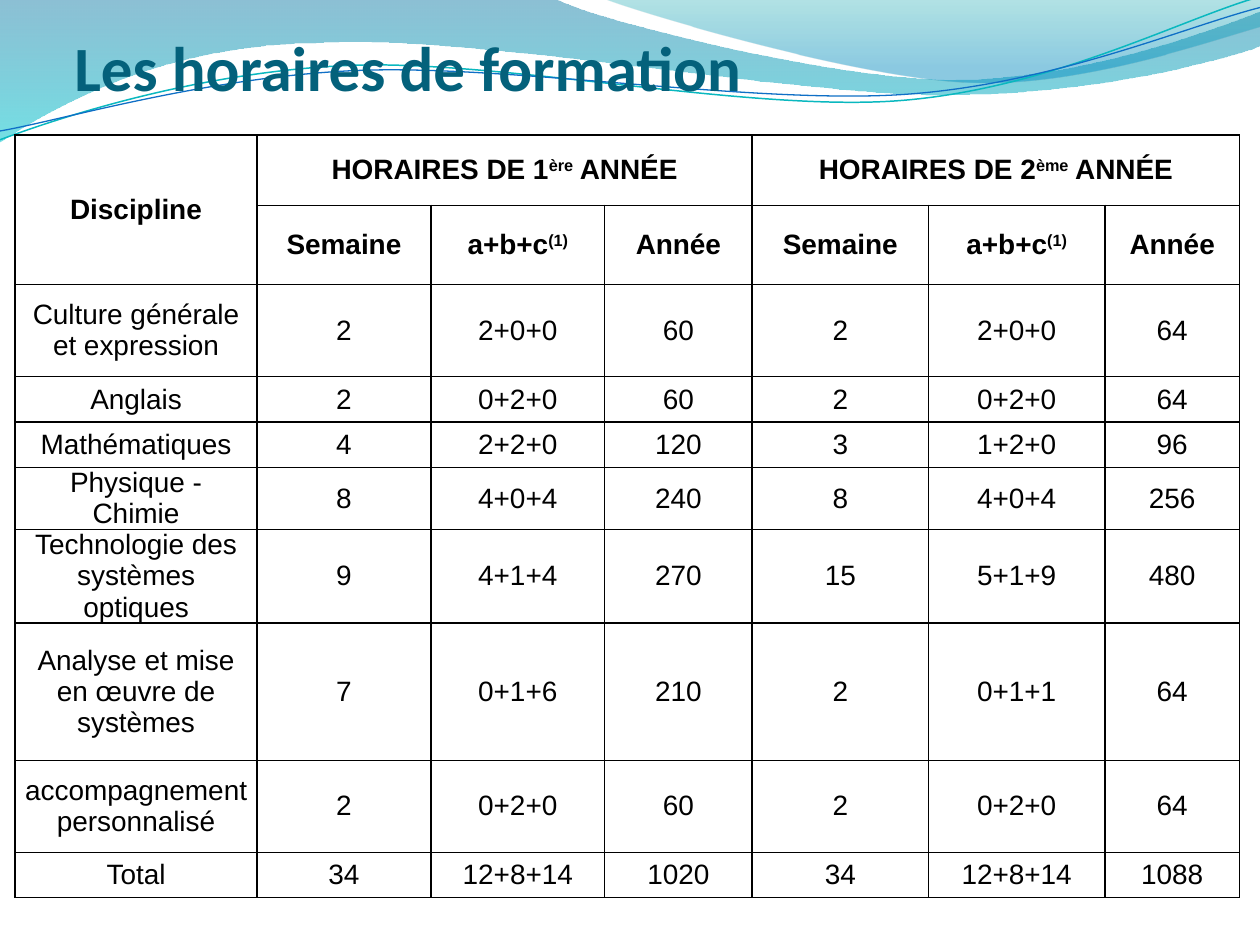
import math

import lxml.etree
import pptx
import pptx.dml.color
import pptx.enum.text
import pptx.oxml
import pptx.oxml.ns
import pptx.util

Cm, Pt = pptx.util.Cm, pptx.util.Pt
qn = pptx.oxml.ns.qn
INCH = 2.54  # centimetres
COLOURS = {
    "title": "04617B", "text": "000000", "border": "000000",
    "deep blue": "0074A1", "aqua": "00C6CF", "teal": "00A1A9", "blue": "008BBF",
    "teal line": "0AB8BF", "blue line": "0F6FC6",
}


def draw_curve(page, start, segments, closed):
    """Draw segments of one point (line) or three points (cubic), in inches."""
    places = [[(Cm(x * INCH), Cm(y * INCH)) for x, y in segment] for segment in segments]
    builder = page.shapes.build_freeform(Cm(start[0] * INCH), Cm(start[1] * INCH))
    builder.add_line_segments([place[-1] for place in places], close=closed)
    curve = builder.convert_to_shape()
    curve.shadow.inherit = False
    for line, place in zip(list(curve.element.iter(qn("a:lnTo"))), places):
        if len(place) == 3:
            line.tag = qn("a:cubicBezTo")
            for index, (x, y) in enumerate(place[:2]):
                line.insert(index, line.makeelement(
                    qn("a:pt"), {"x": str(x - curve.left), "y": str(y - curve.top)}))
    return curve


def add_span(para, text, font, size, colour, bold):
    span = para.add_run()
    span.text = text
    span.font.name = font
    span.font.size = Pt(size)
    span.font.bold = bold
    span.font.color.rgb = pptx.dml.color.RGBColor.from_string(COLOURS[colour])
    return span


deck = pptx.Presentation()
deck.slide_width, deck.slide_height = Cm(10 * INCH), Cm(7.5 * INCH)
page = deck.slides.add_slide(deck.slide_layouts[5])

# Waves: start, segments, gradient stops (position, colour, opacity)
waves = [
    ((0, -0.01),
     [[(4.4, -0.01)],
      [(4.76, 0.17), (6.64, 0.63), (7.58, 0.63)],
      [(8.53, 0.63), (9.58, 0.26), (10, 0.09)],
      [(10.01, 0.36)],
      [(9.83, 0.44), (8.7, 0.76), (7.46, 0.75)],
      [(6.22, 0.75), (3.82, 0.28), (2.57, 0.34)],
      [(1.29, 0.35), (0.46, 0.83), (-0.01, 1.13)],
      [(0, -0.01)]],
     [(0, "deep blue", 45), (100, "aqua", 55)]),
    ((4.79, -0.01),
     [[(5.09, 0.11), (6.82, 0.62), (7.69, 0.65)],
      [(8.56, 0.69), (9.61, 0.32), (10, 0.21)],
      [(10, 0)],
      [(4.79, -0.01)]],
     [(0, "teal", 30), (80, "blue", 45)]),
]
for start, segments, stops in waves:
    wave = draw_curve(page, start, segments, True)
    wave.line.fill.background()
    wave.fill.gradient()
    wave.fill.gradient_angle = 270
    stop_list = wave.element.spPr.find(qn("a:gradFill")).find(qn("a:gsLst"))
    for old_stop in list(stop_list):
        stop_list.remove(old_stop)
    for position, colour, opacity in stops:
        stop = lxml.etree.SubElement(stop_list, qn("a:gs"), pos=str(position * 1000))
        tint = lxml.etree.SubElement(stop, qn("a:srgbClr"), val=COLOURS[colour])
        lxml.etree.SubElement(tint, qn("a:alpha"), val=str(opacity * 1000))

# Strands: points as seen on the page; each shape is turned by the tilt
TILT = 357.3
cosine, sine = math.cos(math.radians(-TILT)), math.sin(math.radians(-TILT))
strands = [
    ([(0, 1.11), (0.48, 0.93), (1.58, 0.57), (2.77, 0.52), (3.95, 0.47), (5.93, 0.89),
      (7.13, 0.8), (8.33, 0.71), (9.38, 0.15), (9.98, -0.02)], 0.57, "teal line", 0.85),
    ([(0, 1.04), (0.47, 0.96), (1.64, 0.61), (2.83, 0.56), (4.03, 0.51), (5.97, 0.83),
      (7.17, 0.75), (8.36, 0.67), (9.41, 0.21), (10, 0.06)], 0.59, "blue line", 0.75),
]
for points, middle, colour, width in strands:
    level = [(5 + (x - 5) * cosine - (y - middle) * sine,
              middle + (x - 5) * sine + (y - middle) * cosine) for x, y in points]
    strand = draw_curve(page, level[0], [level[i:i + 3] for i in (1, 4, 7)], False)
    strand.rotation = TILT
    strand.fill.background()
    strand.line.color.rgb = pptx.dml.color.RGBColor.from_string(COLOURS[colour])
    strand.line.width = Pt(width)

# Title, in front of the waves
title = page.shapes.title
strand.element.addnext(title.element)
title.left, title.top = Cm(0.59 * INCH), Cm(0.13 * INCH)
title.width, title.height = Cm(9 * INCH), Cm(0.7 * INCH)
frame = title.text_frame
frame.auto_size = pptx.enum.text.MSO_AUTO_SIZE.NONE
frame.vertical_anchor = pptx.enum.text.MSO_ANCHOR.BOTTOM
frame.margin_left = frame.margin_right = frame.margin_bottom = 0
frame.margin_top = Cm(0.05 * INCH)
frame.paragraphs[0].alignment = pptx.enum.text.PP_ALIGN.LEFT
add_span(frame.paragraphs[0], "Les horaires de formation", "Calibri", 36, "title", True)

# Timetable; "^" sets off a superscript
year_heads = ["Semaine", "a+b+c^(1)", "Année"]
rows = [
    ["Discipline", "HORAIRES DE 1^ère^ ANNÉE", "", "", "HORAIRES DE 2^ème^ ANNÉE", "", ""],
    [""] + year_heads * 2,
    ["Culture générale et expression", "2", "2+0+0", "60", "2", "2+0+0", "64"],
    ["Anglais", "2", "0+2+0", "60", "2", "0+2+0", "64"],
    ["Mathématiques", "4", "2+2+0", "120", "3", "1+2+0", "96"],
    ["Physique - Chimie", "8", "4+0+4", "240", "8", "4+0+4", "256"],
    ["Technologie des systèmes optiques", "9", "4+1+4", "270", "15", "5+1+9", "480"],
    ["Analyse et mise en œuvre de systèmes", "7", "0+1+6", "210", "2", "0+1+1", "64"],
    ["accompagnement personnalisé", "2", "0+2+0", "60", "2", "0+2+0", "64"],
    ["Total", "34", "12+8+14", "1020", "34", "12+8+14", "1088"],
]
column_widths = [1.92, 1.38, 1.38, 1.17, 1.4, 1.4, 1.07]
row_heights = [0.56, 0.63, 0.73, 0.36, 0.36, 0.36, 0.73, 1.09, 0.73, 0.36]
timetable = page.shapes.add_table(
    len(rows), len(column_widths), Cm(0.12 * INCH), Cm(1.07 * INCH),
    Cm(9.72 * INCH), Cm(6.15 * INCH)).table
timetable.first_row = timetable.horz_banding = False
for column, width in zip(timetable.columns, column_widths):
    column.width = Cm(width * INCH)
for row, height in zip(timetable.rows, row_heights):
    row.height = Cm(height * INCH)

for row_number, row in enumerate(rows):
    for column_number, text in enumerate(row):
        cell = timetable.cell(row_number, column_number)
        cell.vertical_anchor = pptx.enum.text.MSO_ANCHOR.MIDDLE
        cell.margin_left = cell.margin_right = Cm(0.07 * INCH)
        cell.margin_top = cell.margin_bottom = 0
        properties = cell._tc.get_or_add_tcPr()
        for side in ("a:lnL", "a:lnR", "a:lnT", "a:lnB"):
            border = lxml.etree.SubElement(properties, qn(side), w=str(Pt(1)))
            paint = lxml.etree.SubElement(border, qn("a:solidFill"))
            lxml.etree.SubElement(paint, qn("a:srgbClr"), val=COLOURS["border"])
        cell.fill.background()
        para = cell.text_frame.paragraphs[0]
        para.alignment = pptx.enum.text.PP_ALIGN.CENTER
        if not text:
            continue
        for part_number, part in enumerate(text.split("^")):
            span = add_span(para, part, "Arial", 16, "text", row_number < 2)
            if part_number == 1:
                span.font._element.set("baseline", "30000")

timetable.cell(0, 0).merge(timetable.cell(1, 0))
for first in (1, 4):
    timetable.cell(0, first).merge(timetable.cell(0, first + 2))

deck.save("out.pptx")
